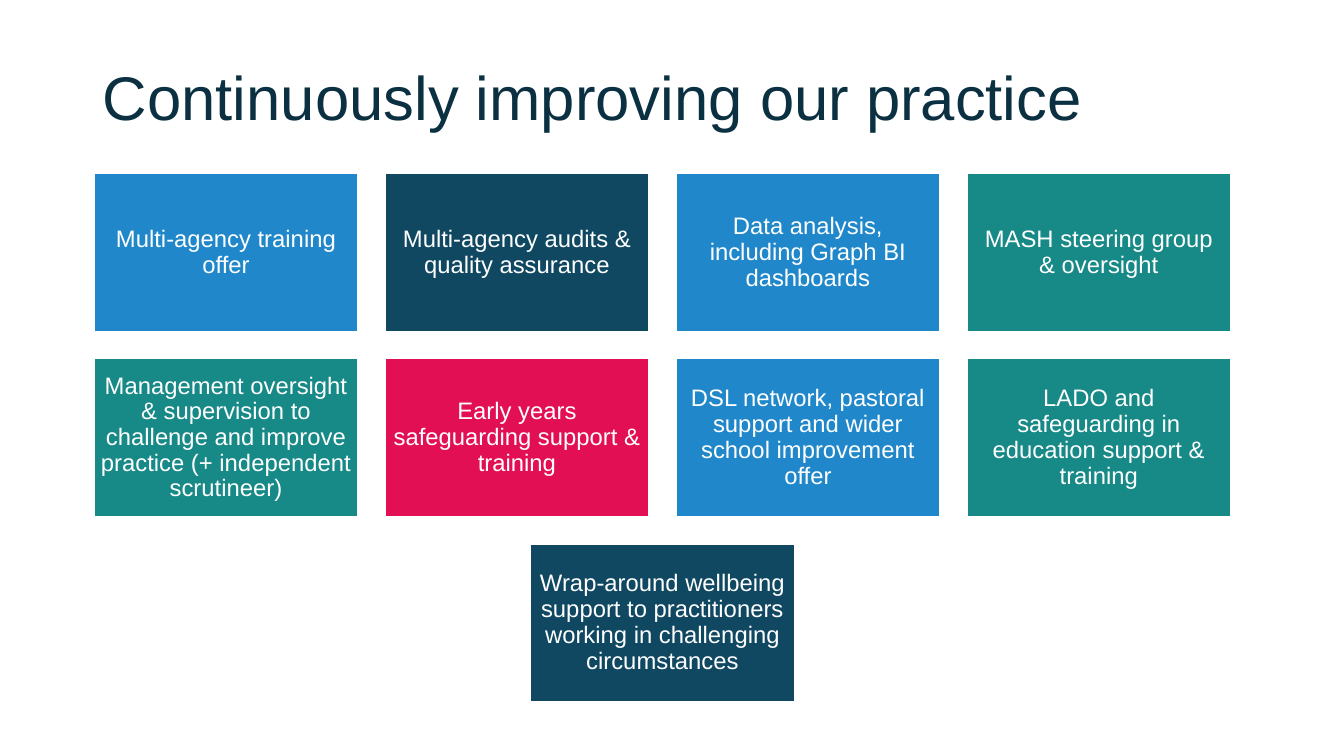
import pptx
import pptx.util
import pptx.dml.color
import pptx.enum.shapes
import pptx.enum.text

Inches = pptx.util.Inches
Pt = pptx.util.Pt
ALIGN = pptx.enum.text.PP_ALIGN
MIDDLE = pptx.enum.text.MSO_ANCHOR.MIDDLE

COLOURS = {
    "title": "0B3041",
    "white": "FFFFFF",
    "blue": "2088CA",
    "navy": "104862",
    "teal": "178987",
    "pink": "E30F55",
}

GRID_LEFT, GRID_TOP, GRID_WIDTH = 0.93, 1.72, 11.28
COLUMNS = 4
GAP_SHARE = 0.1
CARD_WIDTH = GRID_WIDTH / (COLUMNS + (COLUMNS - 1) * GAP_SHARE)
CARD_HEIGHT = CARD_WIDTH * 0.6
GAP = CARD_WIDTH * GAP_SHARE

TITLE_FORMAT = {"size": Pt(44), "name": "Arial", "bold": False}
CARD_FORMAT = {"size": Pt(17), "name": "Arial", "bold": False}
TITLE_FRAME = {
    "word_wrap": True,
    "vertical_anchor": MIDDLE,
    "auto_size": pptx.enum.text.MSO_AUTO_SIZE.NONE,
    "margin_bottom": Inches(0.31),
}
CARD_FRAME = {
    "word_wrap": True,
    "vertical_anchor": MIDDLE,
    "margin_left": Inches(0.07),
    "margin_top": Inches(0.07),
    "margin_right": Inches(0.07),
    "margin_bottom": Inches(0.07),
}

ROWS = [
    [
        ("Multi-agency training offer", "blue"),
        ("Multi-agency audits & quality assurance", "navy"),
        ("Data analysis, including Graph BI dashboards", "blue"),
        ("MASH steering group & oversight", "teal"),
    ],
    [
        ("Management oversight & supervision to challenge and improve "
         "practice (+ independent scrutineer)", "teal"),
        ("Early years safeguarding support & training", "pink"),
        ("DSL network, pastoral support and wider school improvement offer",
         "blue"),
        ("LADO and safeguarding in education support & training", "teal"),
    ],
    [
        ("Wrap-around wellbeing support to practitioners working in "
         "challenging circumstances", "navy"),
    ],
]


def rgb(name):
    return pptx.dml.color.RGBColor.from_string(COLOURS[name])


def set_all(target, values):
    for name, value in values.items():
        setattr(target, name, value)


def write(tf, text, frame, font, colour, align):
    set_all(tf, frame)
    p = tf.paragraphs[0]
    set_all(p, {"alignment": align, "line_spacing": 0.9})
    r = p.add_run()
    r.text = text
    set_all(r.font, font)
    r.font.color.rgb = rgb(colour)


def add_title(s, text):
    sp = s.shapes.title
    set_all(sp, {"left": Inches(0.92), "top": Inches(0.4),
                 "width": Inches(11.5), "height": Inches(1.45)})
    write(sp.text_frame, text, TITLE_FRAME, TITLE_FORMAT, "title", ALIGN.LEFT)


def add_card(s, column, row, text, colour):
    sp = s.shapes.add_shape(
        pptx.enum.shapes.MSO_SHAPE.RECTANGLE,
        Inches(GRID_LEFT + column * (CARD_WIDTH + GAP)),
        Inches(GRID_TOP + row * (CARD_HEIGHT + GAP)),
        Inches(CARD_WIDTH), Inches(CARD_HEIGHT))
    sp.shadow.inherit = False
    sp.fill.solid()
    sp.fill.fore_color.rgb = rgb(colour)
    sp.line.color.rgb = rgb("white")
    sp.line.width = Pt(1.5)
    write(sp.text_frame, text, CARD_FRAME, CARD_FORMAT, "white", ALIGN.CENTER)


def main():
    prs = pptx.Presentation()
    set_all(prs, {"slide_width": Inches(13.33), "slide_height": Inches(7.5)})
    s = prs.slides.add_slide(prs.slide_layouts[5])
    add_title(s, "Continuously improving our practice")
    for row, cards in enumerate(ROWS):
        first_column = (COLUMNS - len(cards)) / 2
        for i, (text, colour) in enumerate(cards):
            add_card(s, first_column + i, row, text, colour)
    prs.save("out.pptx")


if __name__ == "__main__":
    main()
